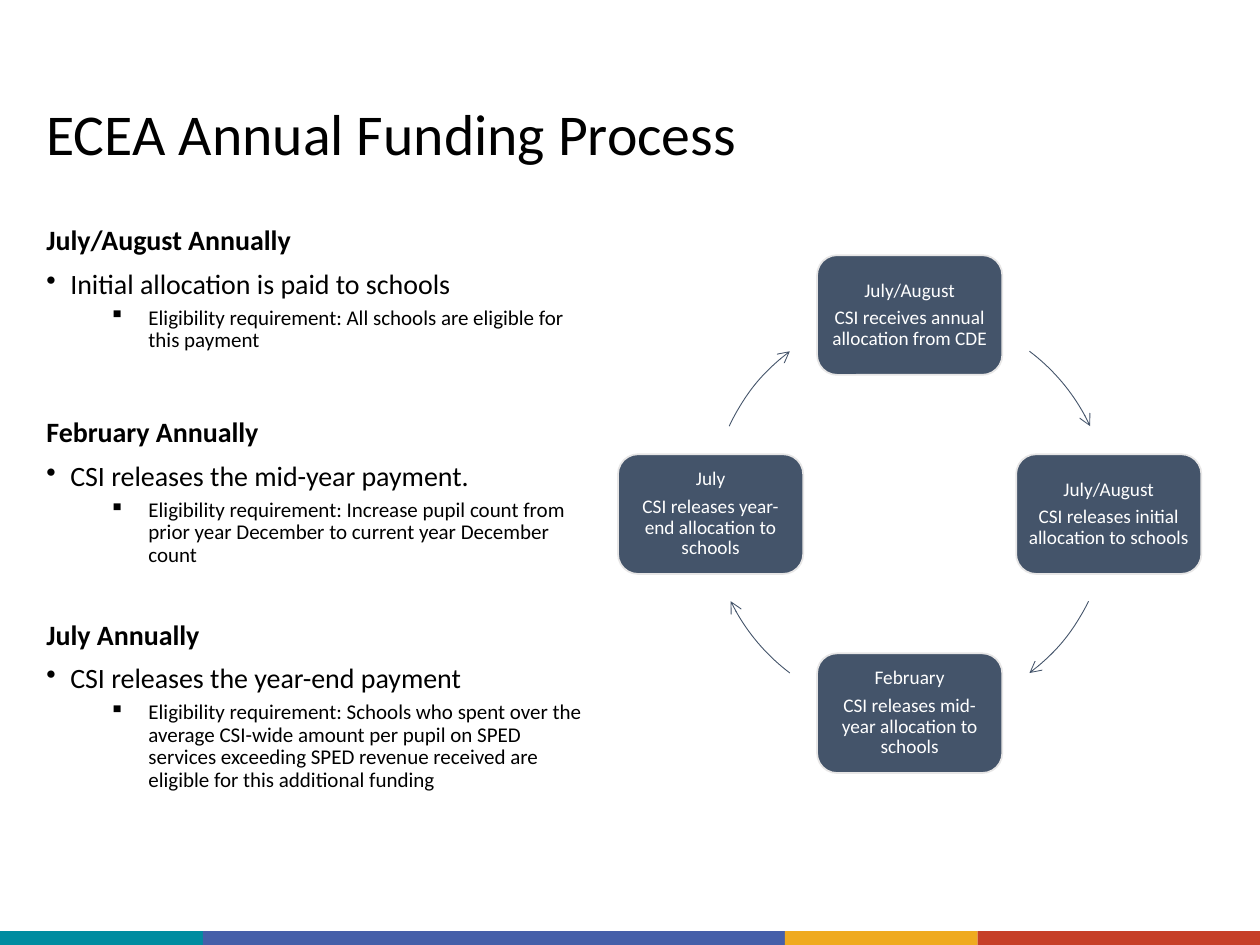
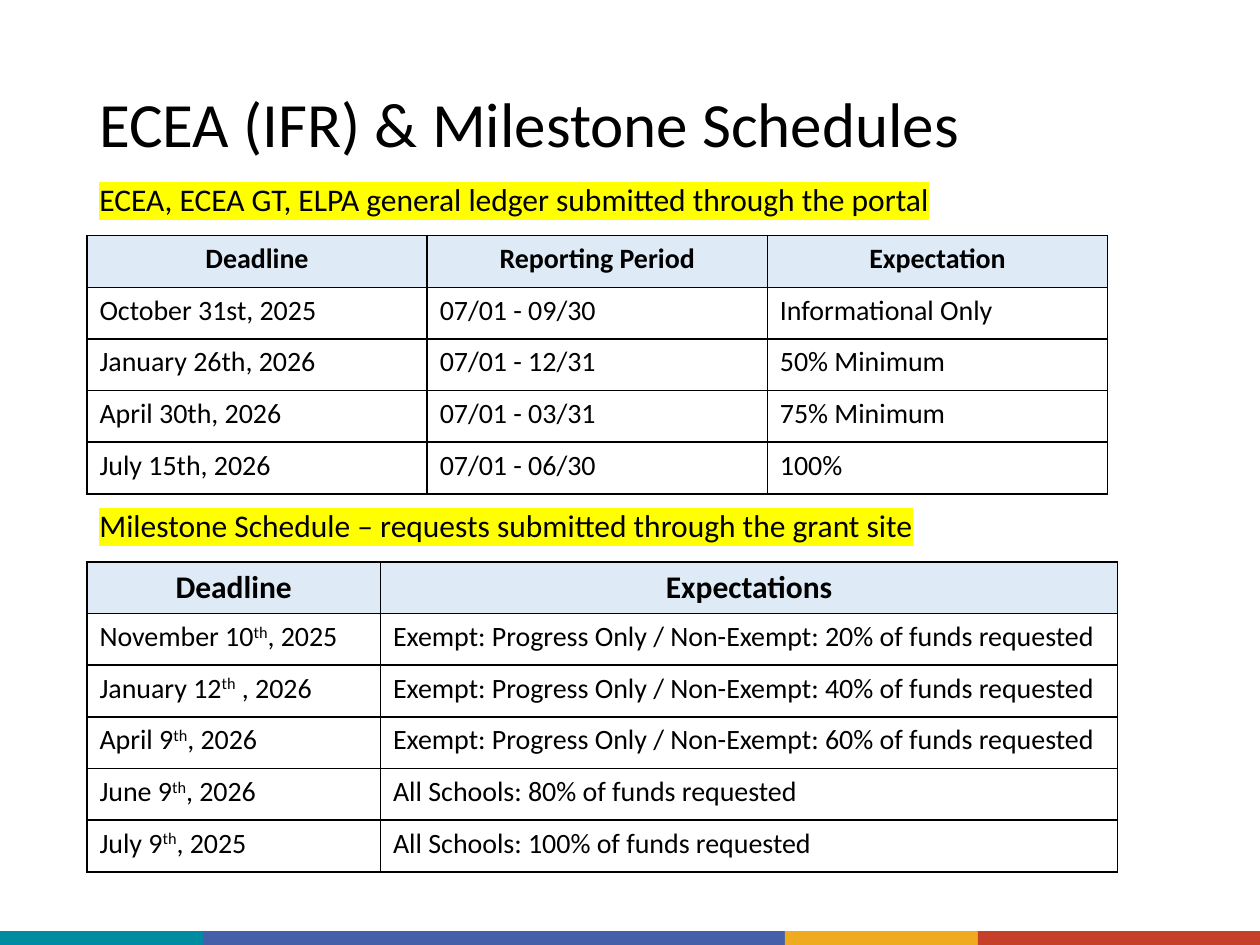
from dataclasses import dataclass

from lxml import etree
from pptx import Presentation
from pptx.dml.color import RGBColor
from pptx.enum import shapes, text
from pptx.oxml.ns import qn
from pptx.util import Inches, Pt

BLACK = RGBColor(0x00, 0x00, 0x00)
WHITE = RGBColor(0xFF, 0xFF, 0xFF)
SLATE = RGBColor(0x44, 0x54, 0x6A)
PALE_GREY = RGBColor(0xE7, 0xE6, 0xE6)
HEADER_BLUE = RGBColor(0xDE, 0xEB, 0xF7)
YELLOW = RGBColor(0xFF, 0xFF, 0x00)
TEAL = RGBColor(0x00, 0x8C, 0xA0)
INDIGO = RGBColor(0x45, 0x5F, 0xA9)
AMBER = RGBColor(0xEF, 0xAA, 0x1F)
RED = RGBColor(0xC6, 0x3F, 0x28)

FONT = "Calibri"
FOOTER_TOP, FOOTER_HEIGHT = 7.39, 0.11
FOOTER_BANDS = [(TEAL, 1.61), (INDIGO, 4.62), (AMBER, 1.53), (RED, 2.24)]
ROW_HEIGHT = 0.41
NODE_WIDTH, NODE_HEIGHT = 1.47, 0.95
CYCLE_X, CYCLE_Y, CYCLE_RADIUS = 7.22, 4.08, 1.58


@dataclass
class ParaStyle:
    size: float
    bold: bool = False
    bullet: str = ""
    left: float = 0
    hanging: float = 0
    before: float = 0


@dataclass
class Milestone:
    """A payment date, with the gap in points that sets it off from the one above."""
    heading: str
    payment: str
    requirement: str
    gap: float


@dataclass
class CycleStep:
    """A node and the arrow that leaves it; angles in degrees, clockwise from the right."""
    month: str
    action: str
    dx: int
    dy: int
    arc_start: float
    arc_end: float
    arc_y: float


@dataclass
class Schedule:
    caption: str
    caption_top: float
    table_top: float
    widths: list[float]
    header_size: float
    rows: list[list[str]]


HEADING = ParaStyle(16, bold=True)
PAYMENT = ParaStyle(16, bullet="•", left=0.19, hanging=0.19, before=7.5)
REQUIREMENT = ParaStyle(12, bullet="▪", left=0.81, hanging=0.31, before=3.8)

MILESTONES = [
    Milestone("July/August Annually", "Initial allocation is paid to schools",
              "Eligibility requirement: All schools are eligible for this payment", 0),
    Milestone("February Annually", "CSI releases the mid-year payment.",
              "Eligibility requirement: Increase pupil count from prior year December "
              "to current year December count", 38),
    Milestone("July Annually", "CSI releases the year-end payment",
              "Eligibility requirement: Schools who spent over the average CSI-wide amount "
              "per pupil on SPED services exceeding SPED revenue received are eligible "
              "for this additional funding", 31),
]

CYCLE = [
    CycleStep("July/August", "CSI receives annual allocation from CDE", 0, -1, 307, 335, 4.05),
    CycleStep("July/August", "CSI releases initial allocation to schools", 1, 0, 26, 53, 4.08),
    CycleStep("February", "CSI releases mid-year allocation to schools", 0, 1, 127, 154, 4.08),
    CycleStep("July", "CSI releases year-end allocation to schools", -1, 0, 205, 233, 4.05),
]

# A bar on either side marks a superscript.
SCHEDULES = [
    Schedule("ECEA, ECEA GT, ELPA general ledger submitted through the portal",
             1.38, 1.87, [2.7, 2.7, 2.7], 16, [
                 ["Deadline", "Reporting Period", "Expectation"],
                 ["October 31st, 2025", "07/01 - 09/30", "Informational Only"],
                 ["January 26th, 2026", "07/01 - 12/31", "50% Minimum"],
                 ["April 30th, 2026", "07/01 - 03/31", "75% Minimum"],
                 ["July 15th, 2026", "07/01 - 06/30", "100%"],
             ]),
    Schedule("Milestone Schedule – requests submitted through the grant site",
             3.97, 4.46, [2.33, 5.85], 18, [
                 ["Deadline", "Expectations"],
                 ["November 10|th|, 2025",
                  "Exempt: Progress Only / Non-Exempt: 20% of funds requested"],
                 ["January 12|th| , 2026",
                  "Exempt: Progress Only / Non-Exempt: 40% of funds requested"],
                 ["April 9|th|, 2026",
                  "Exempt: Progress Only / Non-Exempt: 60% of funds requested"],
                 ["June 9|th|, 2026", "All Schools: 80% of funds requested"],
                 ["July 9|th|, 2025", "All Schools: 100% of funds requested"],
             ]),
]


def style_runs(p, size: float, color: RGBColor = BLACK, bold: bool = False) -> None:
    for r in p.runs:
        r.font.name = FONT
        r.font.size = Pt(size)
        r.font.bold = bold
        r.font.color.rgb = color


def add_text_box(s, left: float, top: float, width: float, height: float):
    tf = s.shapes.add_textbox(Inches(left), Inches(top), Inches(width),
                              Inches(height)).text_frame
    tf.word_wrap = True
    return tf


def add_base(prs, title: str, left: float, top: float, size: float):
    """Add a slide with the footer bands and its title."""
    s = prs.slides.add_slide(prs.slide_layouts[6])
    x = 0.0
    for color, width in FOOTER_BANDS:
        sp = s.shapes.add_shape(shapes.MSO_SHAPE.RECTANGLE, Inches(x), Inches(FOOTER_TOP),
                                Inches(width), Inches(FOOTER_HEIGHT))
        sp.shadow.inherit = False
        sp.fill.solid()
        sp.fill.fore_color.rgb = color
        sp.line.fill.background()
        x += width
    tf = add_text_box(s, left, top, 8.62, 1.45)
    tf.vertical_anchor = text.MSO_ANCHOR.MIDDLE
    tf.text = title
    tf.paragraphs[0].line_spacing = 0.9
    style_runs(tf.paragraphs[0], size)
    return s


def write_paragraph(p, words: str, style: ParaStyle, before: float) -> None:
    p.text = words
    p.line_spacing = 0.9
    p.space_before = Pt(before)
    if style.bullet:
        pPr = p._p.get_or_add_pPr()
        pPr.set("marL", str(Inches(style.left)))
        pPr.set("indent", str(-Inches(style.hanging)))
        etree.SubElement(pPr, qn("a:buChar")).set("char", style.bullet)
    style_runs(p, style.size, bold=style.bold)


def add_milestones(s) -> None:
    tf = add_text_box(s, 0.27, 1.75, 4.54, 4.68)
    p = tf.paragraphs[0]
    for i, m in enumerate(MILESTONES):
        if i:
            p = tf.add_paragraph()
        write_paragraph(p, m.heading, HEADING, m.gap)
        for words, style in ((m.payment, PAYMENT), (m.requirement, REQUIREMENT)):
            write_paragraph(tf.add_paragraph(), words, style, style.before)


def add_node(s, step: CycleStep) -> None:
    left = CYCLE_X + step.dx * CYCLE_RADIUS - NODE_WIDTH / 2
    top = CYCLE_Y + step.dy * CYCLE_RADIUS - NODE_HEIGHT / 2
    sp = s.shapes.add_shape(shapes.MSO_SHAPE.ROUNDED_RECTANGLE, Inches(left), Inches(top),
                            Inches(NODE_WIDTH), Inches(NODE_HEIGHT))
    sp.shadow.inherit = False
    sp.fill.solid()
    sp.fill.fore_color.rgb = SLATE
    sp.line.color.rgb = PALE_GREY
    sp.line.width = Pt(1)
    tf = sp.text_frame
    tf.word_wrap = True
    tf.vertical_anchor = text.MSO_ANCHOR.MIDDLE
    tf.margin_left = tf.margin_right = tf.margin_top = tf.margin_bottom = Inches(0.05)
    tf.text = f"{step.month}\n{step.action}"
    for p in tf.paragraphs:
        p.alignment = text.PP_ALIGN.CENTER
        p.line_spacing = 0.9
        style_runs(p, 11, WHITE)
    tf.paragraphs[0].space_after = Pt(3.8)


def add_arc_arrow(s, step: CycleStep) -> None:
    side = Inches(2 * CYCLE_RADIUS)
    sp = s.shapes.add_shape(shapes.MSO_SHAPE.ARC, Inches(CYCLE_X - CYCLE_RADIUS),
                            Inches(step.arc_y - CYCLE_RADIUS), side, side)
    sp.shadow.inherit = False
    sp.fill.background()
    # Arc adjustments count 60000 to the degree, scaled by 100000.
    sp.adjustments[0] = step.arc_start * 0.6
    sp.adjustments[1] = step.arc_end * 0.6
    sp.line.color.rgb = SLATE
    sp.line.width = Pt(0.5)
    etree.SubElement(sp.line._get_or_add_ln(), qn("a:tailEnd")).set("type", "arrow")


def highlight(r, color: RGBColor) -> None:
    mark = etree.Element(qn("a:highlight"))
    etree.SubElement(mark, qn("a:srgbClr")).set("val", str(color))
    r._r.get_or_add_rPr().find(qn("a:solidFill")).addnext(mark)


def set_borders(cell) -> None:
    tcPr = cell._tc.get_or_add_tcPr()
    for i, side in enumerate(("lnL", "lnR", "lnT", "lnB")):
        ln = etree.Element(qn(f"a:{side}"), w=str(Pt(1)))
        fill = etree.SubElement(ln, qn("a:solidFill"))
        etree.SubElement(fill, qn("a:srgbClr")).set("val", str(BLACK))
        tcPr.insert(i, ln)


def fill_cell(cell, words: str, size: float, is_header: bool) -> None:
    p = cell.text_frame.paragraphs[0]
    for part in words.split("|"):
        p.add_run().text = part
    style_runs(p, size, bold=is_header)
    for r in p.runs[1::2]:
        r._r.get_or_add_rPr().set("baseline", "30000")
    if is_header:
        p.alignment = text.PP_ALIGN.CENTER
        cell.fill.solid()
        cell.fill.fore_color.rgb = HEADER_BLUE
    else:
        cell.fill.background()
    set_borders(cell)


def add_schedule(s, schedule: Schedule) -> None:
    tf = add_text_box(s, 0.69, schedule.caption_top, 8.62, 0.4)
    tf.text = schedule.caption
    style_runs(tf.paragraphs[0], 18)
    highlight(tf.paragraphs[0].runs[0], YELLOW)

    rows, widths = schedule.rows, schedule.widths
    table = s.shapes.add_table(len(rows), len(widths), Inches(0.69),
                               Inches(schedule.table_top), Inches(sum(widths)),
                               Inches(ROW_HEIGHT * len(rows))).table
    table.first_row = table.horz_banding = False
    for column, width in zip(table.columns, widths):
        column.width = Inches(width)
    for i, row in enumerate(rows):
        table.rows[i].height = Inches(ROW_HEIGHT)
        for j, words in enumerate(row):
            size = 16 if i else schedule.header_size
            fill_cell(table.cell(i, j), words, size, i == 0)


def main() -> None:
    prs = Presentation()
    prs.slide_width, prs.slide_height = Inches(10), Inches(7.5)

    s = add_base(prs, "ECEA Annual Funding Process", 0.27, 0.36, 33)
    add_milestones(s)
    for step in CYCLE:
        add_node(s, step)
        add_arc_arrow(s, step)

    s = add_base(prs, "ECEA (IFR) & Milestone Schedules", 0.69, 0.28, 36)
    for schedule in SCHEDULES:
        add_schedule(s, schedule)

    prs.save("out.pptx")


if __name__ == "__main__":
    main()
